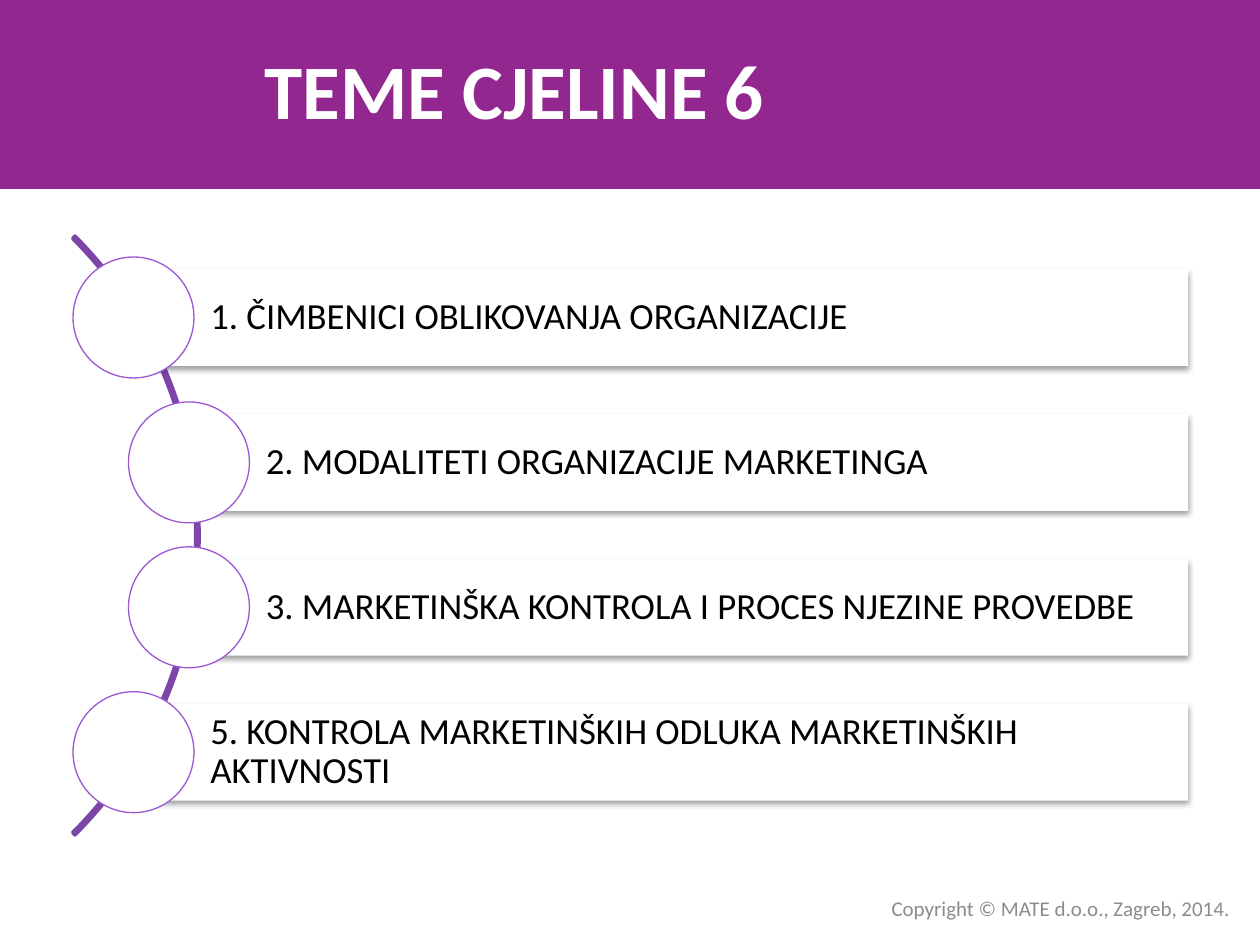
"""Build the topic overview slide for unit 6."""
from lxml.etree import SubElement
from pptx import Presentation
from pptx.dml.color import RGBColor
from pptx.enum.shapes import MSO_SHAPE as Shape
from pptx.enum.text import MSO_ANCHOR as Anchor, PP_ALIGN as Align
from pptx.oxml.ns import qn
from pptx.util import Inches, Pt

COLORS = {
    "band": "92278F", "arc": "7C46A9", "ring": "9B57D3",
    "white": "FFFFFF", "black": "000000", "footer": "8C8C8C",
}
TOPICS = [
    (1.06, "1. ČIMBENICI OBLIKOVANJA ORGANIZACIJE"),
    (1.5, "2. MODALITETI ORGANIZACIJE MARKETINGA"),
    (1.5, "3. MARKETINŠKA KONTROLA I PROCES NJEZINE PROVEDBE"),
    (1.06, "5. KONTROLA MARKETINŠKIH ODLUKA MARKETINŠKIH AKTIVNOSTI"),
]
FIRST_CENTER, PITCH = 2.52, 1.15
BAR_RIGHT, BAR_HEIGHT, CIRCLE = 9.43, 0.77, 0.96


def color(name):
    return RGBColor.from_string(COLORS[name])


def add_figure(shapes, preset, box, fill=None, line=None, width=0):
    figure = shapes.add_shape(preset, *map(Inches, box))
    figure.shadow.inherit = False
    if fill:
        figure.fill.solid()
        figure.fill.fore_color.rgb = color(fill)
    else:
        figure.fill.background()
    if line:
        figure.line.color.rgb = color(line)
        figure.line.width = Pt(width)
    else:
        figure.line.fill.background()
    return figure


def write(holder, text, size, ink, align, bold=False):
    frame = holder.text_frame
    frame.word_wrap = True
    frame.vertical_anchor = Anchor.MIDDLE
    paragraph = frame.paragraphs[0]
    paragraph.alignment = align
    run = paragraph.add_run()
    run.text = text
    run.font.name = "Calibri"
    run.font.size = Pt(size)
    run.font.bold = bold
    run.font.color.rgb = color(ink)
    return frame


def cast_shadow(bar):
    effects = bar.element.spPr.find(qn("a:effectLst"))
    shadow = SubElement(effects, qn("a:outerShdw"), blurRad=str(Pt(3.1)),
                        dist=str(Pt(1.6)), dir="5400000", rotWithShape="0")
    tint = SubElement(shadow, qn("a:srgbClr"), val=COLORS["black"])
    SubElement(tint, qn("a:alpha"), val="38000")


def add_topic(shapes, left, center, text):
    bar = add_figure(shapes, Shape.RECTANGLE,
                     (left, center - BAR_HEIGHT / 2, BAR_RIGHT - left, BAR_HEIGHT), "white")
    cast_shadow(bar)
    frame = write(bar, text, 21, "black", Align.LEFT)
    frame.margin_left = Inches(0.61)
    frame.margin_top = frame.margin_right = frame.margin_bottom = Inches(0.06)
    frame.paragraphs[0].line_spacing = 0.9
    add_figure(shapes, Shape.OVAL, (left - CIRCLE / 2, center - CIRCLE / 2, CIRCLE, CIRCLE),
               "white", "ring", 0.75)


def add_topic_list(slide):
    shapes = slide.shapes.add_group_shape().shapes
    arc = add_figure(shapes, Shape.BLOCK_ARC, (-5.14, 0.89, 6.72, 6.72), line="arc", width=2)
    for index, value in enumerate((189, 27, 0.004)):
        arc.adjustments[index] = value
    for index, (left, text) in enumerate(TOPICS):
        add_topic(shapes, left, FIRST_CENTER + index * PITCH, text)


def add_heading(slide):
    title = slide.shapes.title
    title.left, title.top, title.width, title.height = map(Inches, (0, 0.08, 8.17, 1.25))
    write(title, "TEME CJELINE 6", 44, "white", Align.CENTER, bold=True)
    band = add_figure(slide.shapes, Shape.RECTANGLE, (0, 0, 10, 1.5), "band")
    title.element.addprevious(band.element)


def add_footer(slide):
    footer = slide.shapes.add_textbox(*map(Inches, (4.69, 7.06, 5.17, 0.3)))
    write(footer, "Copyright © MATE d.o.o., Zagreb, 2014.", 12, "footer", Align.RIGHT)


def main():
    deck = Presentation()
    deck.slide_width, deck.slide_height = Inches(10), Inches(7.5)
    slide = deck.slides.add_slide(deck.slide_layouts[5])
    add_heading(slide)
    add_topic_list(slide)
    add_footer(slide)
    deck.save("out.pptx")


if __name__ == "__main__":
    main()
